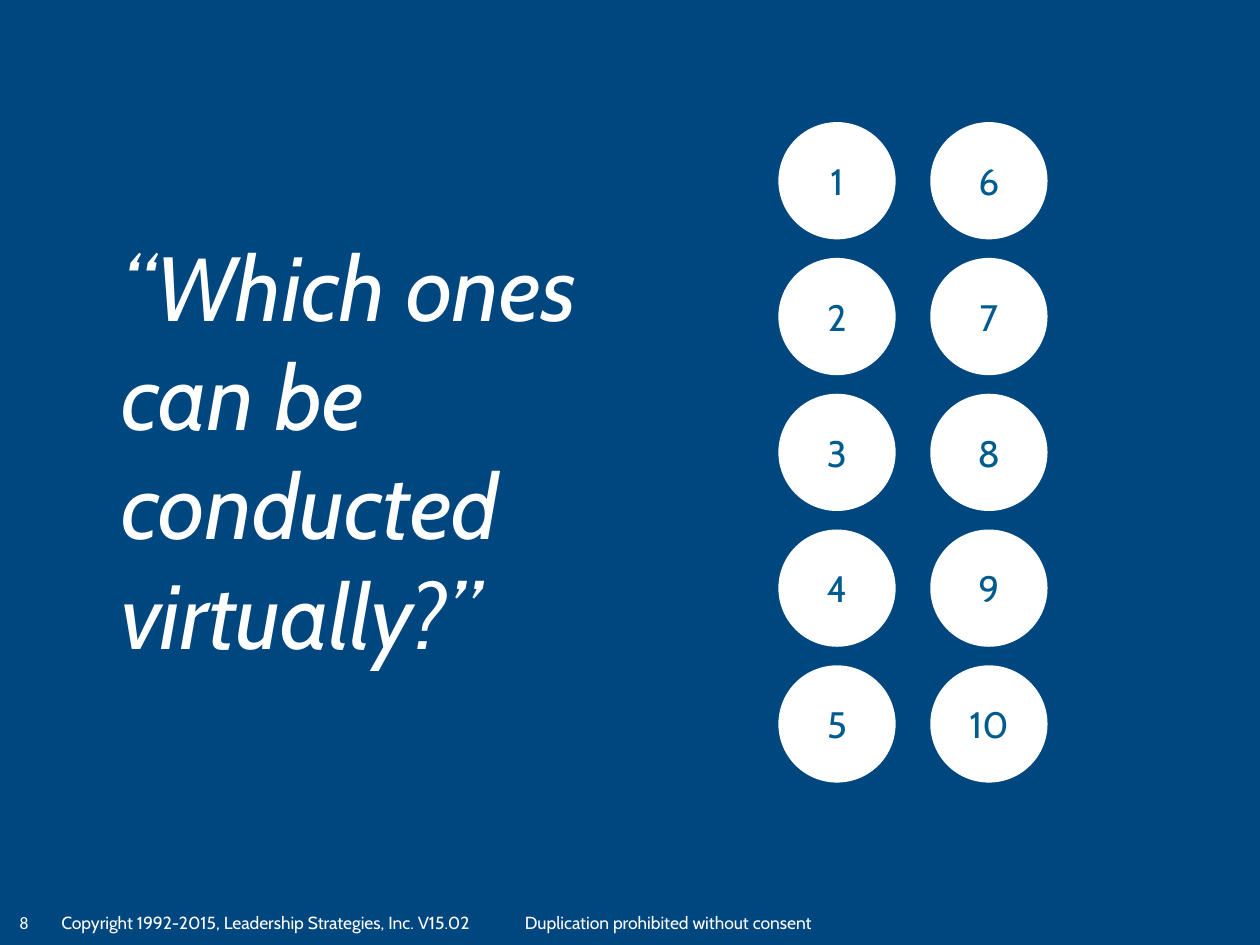
import dataclasses

import pptx
import pptx.dml.color
import pptx.enum.shapes
import pptx.enum.text
import pptx.util

Pt = pptx.util.Pt
Color = pptx.dml.color.RGBColor.from_string
Align = pptx.enum.text.PP_ALIGN
Anchor = pptx.enum.text.MSO_ANCHOR


@dataclasses.dataclass(frozen=True)
class Theme:
    """Hold the colours, fonts and type sizes."""
    back: str = "00467F"
    light: str = "FFFFFF"
    ink: str = "005B8E"
    face: str = "Cabin"
    plain: str = "Calibri"
    large: float = 52
    mid: float = 21
    small: float = 10


THEME = Theme()


def add_run(para, text, size, color, face=THEME.face, slant=False):
    """Add one formatted run to a paragraph."""
    run = para.add_run()
    run.text = text
    run.font.size = Pt(size)
    run.font.name = face
    run.font.italic = slant
    run.font.color.rgb = Color(color)


def place(shape, box):
    """Move a shape to a box of left, top, width and height."""
    shape.left, shape.top, shape.width, shape.height = map(Pt, box)


def add_title(slide, box, lines):
    """Set the question in the title placeholder."""
    title = slide.shapes.title
    place(title, box)
    frame = title.text_frame
    frame.word_wrap = True
    frame.auto_size = pptx.enum.text.MSO_AUTO_SIZE.NONE
    frame.vertical_anchor = Anchor.MIDDLE
    para = frame.paragraphs[0]
    para.alignment = Align.LEFT
    for index, line in enumerate(lines):
        if index:
            para.add_line_break()
        add_run(para, line, THEME.large, THEME.light, slant=True)


def add_disc(slide, box, label):
    """Draw one numbered circle."""
    disc = slide.shapes.add_shape(
        pptx.enum.shapes.MSO_SHAPE.OVAL, *map(Pt, box))
    disc.shadow.inherit = False
    disc.fill.solid()
    disc.fill.fore_color.rgb = Color(THEME.light)
    disc.line.fill.background()
    frame = disc.text_frame
    frame.vertical_anchor = Anchor.MIDDLE
    frame.margin_left = frame.margin_right = Pt(0)
    para = frame.paragraphs[0]
    para.alignment = Align.CENTER
    add_run(para, label, THEME.mid, THEME.ink)


def add_grid(slide, box, cols=2, rows=5, size=67):
    """Fill a box with numbered circles, column by column."""
    left, top, width, height = box
    across = (width - size) / (cols - 1)
    down = (height - size) / (rows - 1)
    for index in range(cols * rows):
        col, row = divmod(index, rows)
        spot = (left + col * across, top + row * down, size, size)
        add_disc(slide, spot, str(index + 1))


def add_note(slide, box, text, align, face=THEME.face, wrap=False):
    """Add one small line of footer text."""
    note = slide.shapes.add_textbox(*map(Pt, box))
    frame = note.text_frame
    frame.word_wrap = wrap
    frame.vertical_anchor = Anchor.BOTTOM
    para = frame.paragraphs[0]
    para.alignment = align
    add_run(para, text, THEME.small, THEME.light, face)


def add_footer(slide, box):
    """Lay out the page number and the two notices."""
    left, top, width, height = box
    add_note(slide, (left, top, 27.4, height), "8", Align.CENTER,
             THEME.plain, True)
    add_note(slide, (left + 28, top, 257, height),
             "Copyright 1992-2015, Leadership Strategies, Inc. V15.02",
             Align.LEFT)
    add_note(slide, (left + width - 178.5, top, 178.5, height),
             "Duplication prohibited without consent", Align.CENTER)


def main():
    """Build and save the slide."""
    deck = pptx.Presentation()
    deck.slide_width, deck.slide_height = Pt(720), Pt(540)
    slide = deck.slides.add_slide(deck.slide_layouts.get_by_name("Title Only"))
    fill = slide.background.fill
    fill.solid()
    fill.fore_color.rgb = Color(THEME.back)
    add_footer(slide, (0, 517, 471, 19.5))
    add_title(slide, (62, 190, 636, 133),
              ("“Which ones", "can be ", "conducted", "virtually?”"))
    add_grid(slide, (444.8, 69.8, 153.8, 377.4))
    deck.save("out.pptx")


if __name__ == "__main__":
    main()
